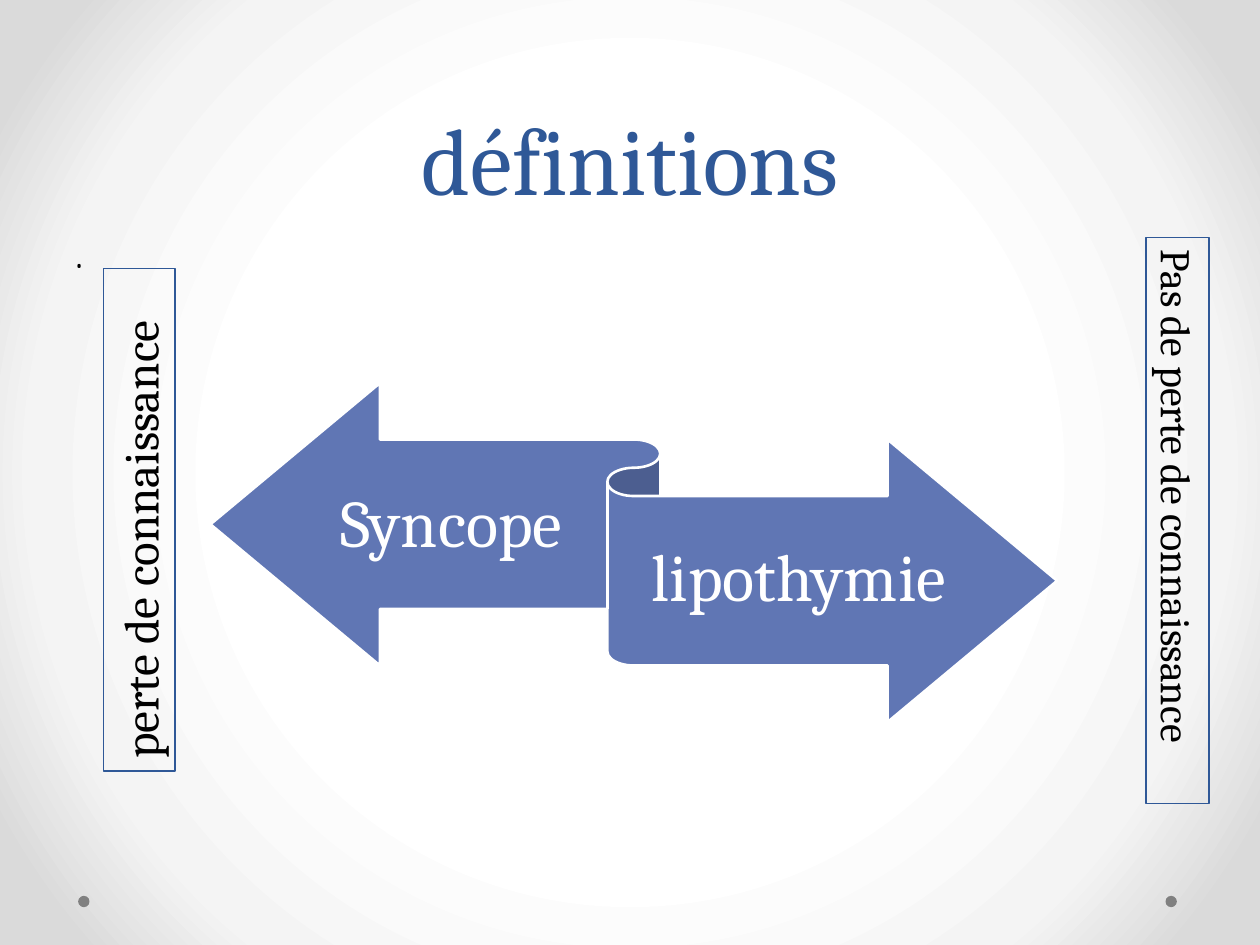
from lxml import etree
from pptx import Presentation
from pptx.dml.color import RGBColor
from pptx.enum import shapes, text
from pptx.oxml import ns
from pptx.util import Inches, Pt

SERIF = "Cambria"
BLUE = "2F5897"
BLACK = "000000"
WHITE = "FFFFFF"


def color(value):
    return RGBColor.from_string(value)


def box(*lengths):
    return [Inches(length) for length in lengths]


def add_child(parent, tag, **attributes):
    return etree.SubElement(parent, ns.qn(tag), attributes)


def set_background(slide):
    fill = slide.background.fill
    fill.gradient()
    gradient = slide.background._cSld.find(".//" + ns.qn("a:gradFill"))
    for part in list(gradient):
        gradient.remove(part)
    stops = add_child(gradient, "a:gsLst")
    for percent, tint in ((50, "FFFFFF"), (76, "F4F4F4"), (92, "DADADA")):
        stop = add_child(stops, "a:gs", pos=str(percent * 1000))
        add_child(stop, "a:srgbClr", val=tint)
    center = add_child(gradient, "a:path", path="circle")
    add_child(center, "a:fillToRect", l="50000", t="50000", r="50000", b="50000")


def write(holder, wording, size, tint, font=SERIF, paragraph_format=None, **frame_format):
    frame = holder.text_frame
    for name, value in frame_format.items():
        setattr(frame, name, value)
    paragraph = frame.paragraphs[0]
    for name, value in (paragraph_format or {}).items():
        setattr(paragraph, name, value)
    run = paragraph.add_run()
    run.text = wording
    for name, value in {"size": Pt(size), "name": font}.items():
        setattr(run.font, name, value)
    run.font.color.rgb = color(tint)


def add_filled(parent, preset, place, fill, line_width=0):
    shape = parent.add_shape(preset, *box(*place))
    shape.shadow.inherit = False
    shape.fill.solid()
    shape.fill.fore_color.rgb = color(fill)
    if line_width:
        shape.line.color.rgb = color(WHITE)
        shape.line.width = Pt(line_width)
    else:
        shape.line.fill.background()


def add_title(slide):
    title = slide.shapes.title
    places = zip(("left", "top", "width", "height"), box(0.5, 0, 9, 1.75))
    for name, value in places:
        setattr(title, name, value)
    write(title, "définitions", 54, BLUE,
          paragraph_format={"alignment": text.PP_ALIGN.CENTER, "line_spacing": Pt(58)},
          vertical_anchor=text.MSO_ANCHOR.BOTTOM, auto_size=text.MSO_AUTO_SIZE.NONE)


def add_ribbon(slide):
    ribbon = slide.shapes.add_group_shape()
    add_filled(ribbon.shapes, shapes.MSO_SHAPE.LEFT_RIGHT_RIBBON,
               (1.67, 3.04, 6.72, 2.69), "6076B4", 1.5)
    for wording, place in (("Syncope", (2.47, 3.52, 2.22, 1.32)),
                           ("lipothymie", (5.03, 3.95, 2.62, 1.32))):
        label = ribbon.shapes.add_textbox(*box(*place))
        write(label, wording, 38, WHITE,
              paragraph_format={"alignment": text.PP_ALIGN.CENTER, "line_spacing": 0.9},
              word_wrap=True, vertical_anchor=text.MSO_ANCHOR.MIDDLE,
              margin_left=0, margin_right=0,
              margin_top=Inches(0.15), margin_bottom=Inches(0.16))


def add_side_note(slide, wording, place, rotation, size):
    note = slide.shapes.add_textbox(*box(*place))
    note.rotation = rotation
    note.line.color.rgb = color(BLUE)
    note.line.width = Pt(0.75)
    write(note, wording, size, BLACK, word_wrap=False,
          auto_size=text.MSO_AUTO_SIZE.SHAPE_TO_FIT_TEXT)


def main():
    deck = Presentation()
    deck.slide_width, deck.slide_height = box(10, 7.5)
    slide = deck.slides.add_slide(deck.slide_layouts[5])
    set_background(slide)
    for left in (9.25, 0.62):
        add_filled(slide.shapes, shapes.MSO_SHAPE.OVAL, (left, 7.11, 0.09, 0.09), "808080")
    add_title(slide)
    body = slide.shapes.add_textbox(*box(0.5, 1.75, 9, 4.95))
    write(body, ".", 24, BLACK, "Quicksand", word_wrap=True)
    add_ribbon(slide)
    add_side_note(slide, "perte de connaissance", (-0.89, 3.84, 3.99, 0.57), 270, 28)
    add_side_note(slide, "Pas de perte de connaissance", (7.1, 3.88, 4.49, 0.5), 90, 24)
    deck.save("out.pptx")


if __name__ == "__main__":
    main()
